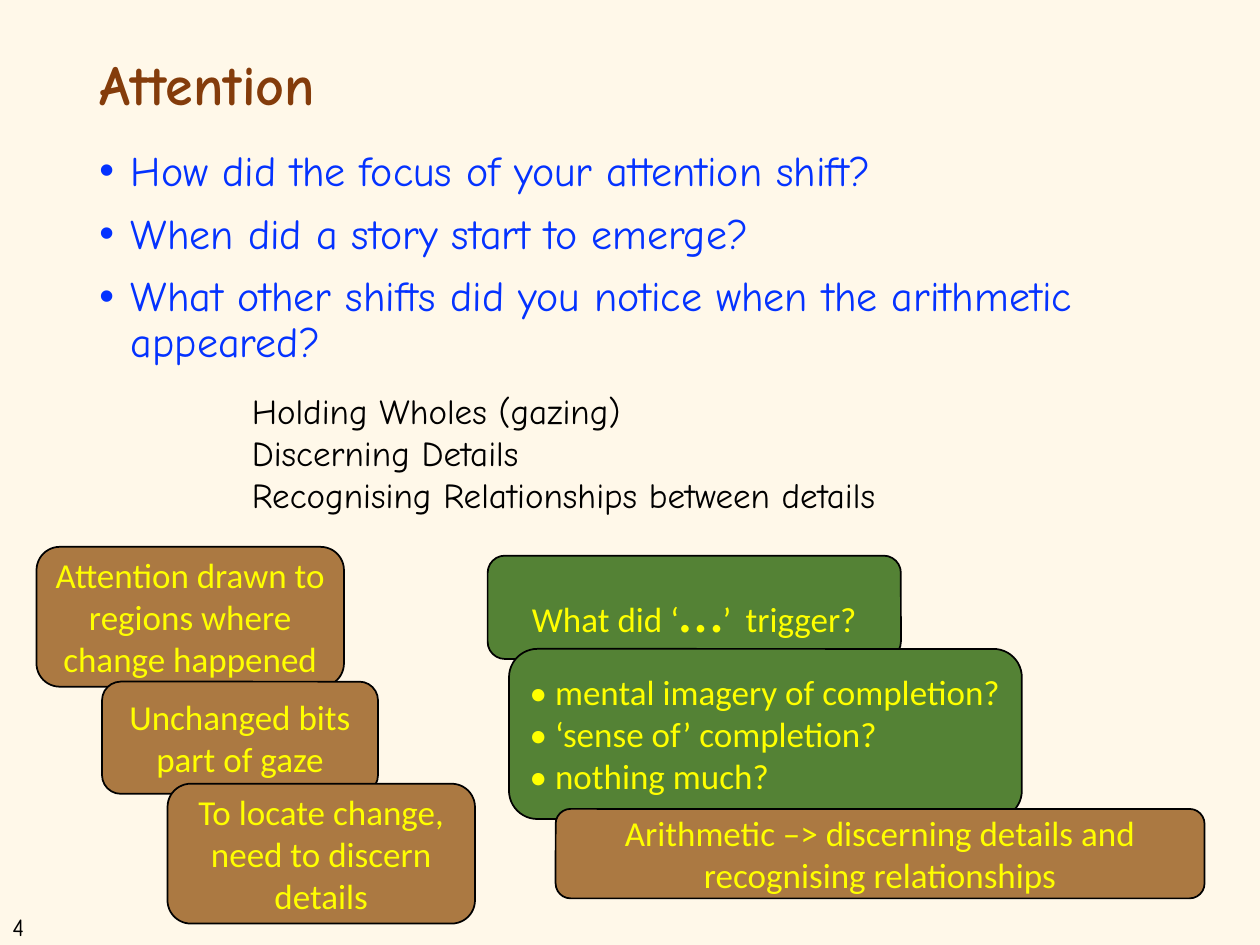
from lxml import etree
from pptx import Presentation
from pptx.dml.color import RGBColor
from pptx.enum import shapes, text
from pptx.oxml import ns
from pptx.util import Inches, Pt

CREAM = RGBColor(0xFF, 0xF8, 0xE9)
BROWN = RGBColor(0x84, 0x3C, 0x0B)
BLUE = RGBColor(0x04, 0x32, 0xFF)
TAN = RGBColor(0xAB, 0x79, 0x42)
GREEN = RGBColor(0x54, 0x82, 0x35)
YELLOW = RGBColor(0xFF, 0xFF, 0x00)
BLACK = RGBColor(0, 0, 0)

LEFT, CENTER = text.PP_ALIGN.LEFT, text.PP_ALIGN.CENTER
COMIC, CALIBRI = "Comic Neue", "Calibri"
CARD_SIZE, BIG_SIZE = 20, 36

# Content: each paragraph is a string, or a list of (text, size) runs
QUESTIONS = [
    "How did the focus of your attention shift?",
    "When did a story start to emerge?",
    "What other shifts did you notice when the arithmetic appeared?",
]
FORMS_OF_ATTENTION = [
    "Holding Wholes (gazing)",
    "Discerning Details",
    "Recognising Relationships between details",
]
TRIGGER = [("What did ‘", CARD_SIZE), ("…", BIG_SIZE), ("’", CARD_SIZE),
           (" ", BIG_SIZE), ("trigger?", CARD_SIZE)]
RESPONSES = ["• mental imagery of completion?", "• ‘sense of’ completion?",
             "• nothing much?"]

# Text boxes: position, paragraphs, font, paragraph format, bullet
TEXT_BOXES = [
    ((0, 7.19, 0.57, 0.34), ["4"],
     dict(size=Pt(14), color=BLACK), {}, False),
    ((0.69, 0.4, 8.62, 0.71), ["Attention"],
     dict(size=Pt(32), color=BROWN, bold=True), dict(line_spacing=0.9), False),
    ((0.69, 1.14, 8.62, 1.78), QUESTIONS,
     dict(size=Pt(24), color=BLUE),
     dict(line_spacing=0.9, space_before=Pt(10)), True),
    ((1.9, 3.04, 6.2, 1.11), FORMS_OF_ATTENTION,
     dict(size=Pt(20), color=BLACK), {}, False),
]

# Rounded cards, back to front: position, fill, alignment, paragraphs
CARDS = [
    ((0.29, 4.34, 2.44, 1.11), TAN, CENTER,
     ["Attention drawn to regions where change happened"]),
    ((0.81, 5.41, 2.19, 0.89), TAN, CENTER, ["Unchanged bits part of gaze"]),
    ((1.33, 6.22, 2.44, 1.11), TAN, CENTER,
     ["To locate change, need to discern details"]),
    ((3.87, 4.41, 3.28, 0.82), GREEN, CENTER, [TRIGGER]),
    ((4.04, 5.15, 4.07, 1.35), GREEN, LEFT, RESPONSES),
    ((4.41, 6.42, 5.15, 0.71), TAN, CENTER,
     ["Arithmetic –> discerning details and recognising relationships"]),
]


def set_all(target, values):
    for name, value in values.items():
        setattr(target, name, value)


def add_bullet(paragraph):
    properties = paragraph._p.get_or_add_pPr()
    properties.set("marL", str(Inches(0.25)))
    properties.set("indent", str(-Inches(0.25)))
    font = etree.SubElement(properties, ns.qn("a:buFont"))
    font.set("typeface", "Arial")
    etree.SubElement(properties, ns.qn("a:buChar")).set("char", "•")


def write(frame, paragraphs, font, layout, bullet=False):
    frame.word_wrap = True
    for index, content in enumerate(paragraphs):
        paragraph = frame.paragraphs[0] if index == 0 else frame.add_paragraph()
        set_all(paragraph, layout)
        if bullet:
            add_bullet(paragraph)
        runs = [(content, None)] if isinstance(content, str) else content
        for words, size in runs:
            run = paragraph.add_run()
            run.text = words
            values = dict(font)
            run.font.color.rgb = values.pop("color")
            set_all(run.font, values)
            if size:
                run.font.size = Pt(size)


presentation = Presentation()
presentation.slide_width, presentation.slide_height = Inches(10), Inches(7.5)
slide = presentation.slides.add_slide(presentation.slide_layouts[6])
slide.background.fill.solid()
slide.background.fill.fore_color.rgb = CREAM

# Slide number, title, questions and forms of attention
for place, paragraphs, font, layout, bullet in TEXT_BOXES:
    box = slide.shapes.add_textbox(*map(Inches, place))
    write(box.text_frame, paragraphs, dict(font, name=COMIC), layout, bullet)

# Overlapping cards
for place, fill, alignment, paragraphs in CARDS:
    card = slide.shapes.add_shape(
        shapes.MSO_SHAPE.ROUNDED_RECTANGLE, *map(Inches, place))
    card.shadow.inherit = False
    card.fill.solid()
    card.fill.fore_color.rgb = fill
    card.line.color.rgb = BLACK
    card.line.width = Pt(1)
    card.text_frame.vertical_anchor = text.MSO_ANCHOR.MIDDLE
    write(card.text_frame, paragraphs,
          dict(name=CALIBRI, size=Pt(CARD_SIZE), color=YELLOW),
          dict(alignment=alignment))

presentation.save("out.pptx")
